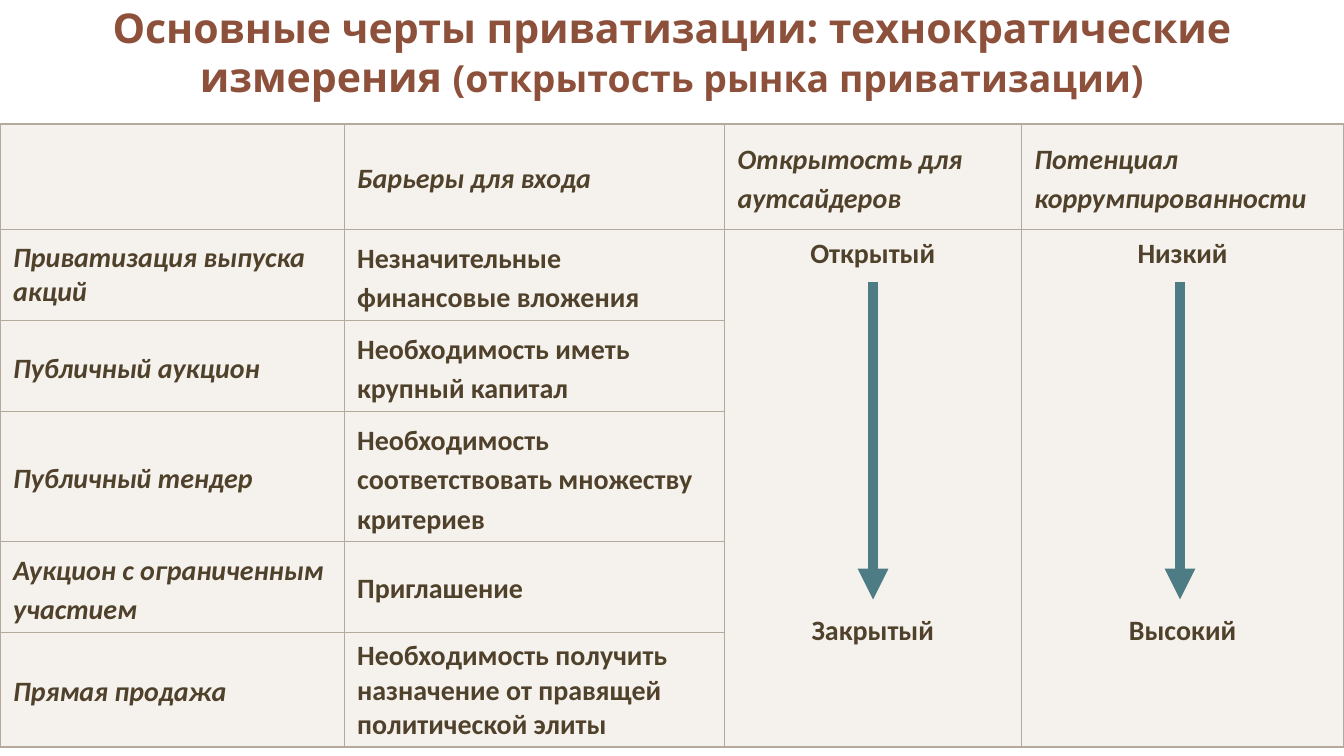
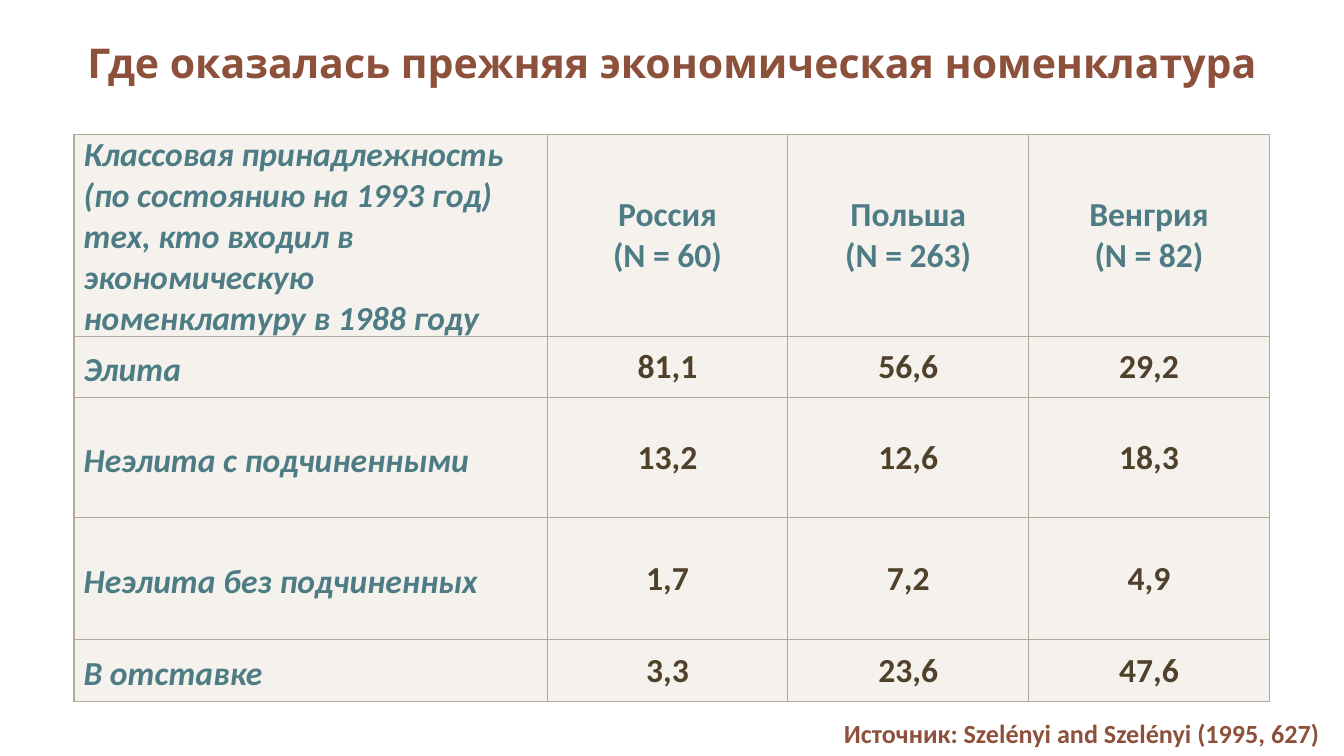
from dataclasses import dataclass, replace
from typing import NamedTuple, Optional

from lxml.etree import SubElement
from pptx import Presentation
from pptx.dml.color import RGBColor
from pptx.enum.shapes import MSO_CONNECTOR
from pptx.enum.text import MSO_ANCHOR, MSO_AUTO_SIZE, PP_ALIGN
from pptx.oxml import parse_xml
from pptx.oxml.ns import nsdecls, qn
from pptx.slide import Slide
from pptx.table import Table, _Cell as Cell
from pptx.text.text import TextFrame, _Paragraph as Paragraph
from pptx.util import Cm, Pt

BROWN = "8D503B"
DARK = "50412B"
TEAL = "4D7C85"
BEIGE = "EFEAE4"
BORDER = "B3A99D"
WHITE = "FFFFFF"
BODY_FONT = "Calibri"
TITLE_FONT = "Open Sans"


class Box(NamedTuple):
    left: float
    top: float
    width: float
    height: float


class TitlePart(NamedTuple):
    text: str
    size: float


class Arrow(NamedTuple):
    x: float
    top: float
    bottom: float


@dataclass(frozen=True)
class CellStyle:
    size: float
    color: str
    italic: bool = False
    align: PP_ALIGN = PP_ALIGN.LEFT
    anchor: MSO_ANCHOR = MSO_ANCHOR.MIDDLE
    line_spacing: Optional[float] = None
    space_after: float = 0


class Entry(NamedTuple):
    text: str
    style: CellStyle


@dataclass(frozen=True)
class Grid:
    left: float
    top: float
    columns: list[float]
    heights: list[float]
    margins: tuple[float, float]


class Scale(NamedTuple):
    column: int
    start: str
    end: str


def rgb(value: str) -> RGBColor:
    return RGBColor.from_string(value)


def format_runs(paragraph: Paragraph, font: str, size: float, color: str,
                italic: bool = False) -> None:
    for run in paragraph.runs:
        run.font.name = font
        run.font.size = Pt(size)
        run.font.bold = True
        run.font.italic = italic
        run.font.color.rgb = rgb(color)


def add_text_frame(slide: Slide, box: Box) -> TextFrame:
    frame = slide.shapes.add_textbox(*map(Cm, box)).text_frame
    frame.word_wrap = True
    return frame


def add_title(slide: Slide, height: float, parts: list[TitlePart],
              line_spacing: Optional[float] = None) -> None:
    frame = add_text_frame(slide, Box(0.3, 0, 24.8, height))
    frame.vertical_anchor = MSO_ANCHOR.MIDDLE
    heading = frame.paragraphs[0]
    heading.alignment = PP_ALIGN.CENTER
    heading.line_spacing = line_spacing
    heading.text = parts[0].text
    for part in parts[1:]:
        heading.add_run().text = part.text
    format_runs(heading, TITLE_FONT, parts[0].size, BROWN)
    for run, part in zip(heading.runs, parts):
        run.font.size = Pt(part.size)


def add_source(slide: Slide, citation: str) -> None:
    frame = add_text_frame(slide, Box(15.7, 13.44, 9.7, 0.86))
    frame.auto_size = MSO_AUTO_SIZE.SHAPE_TO_FIT_TEXT
    frame.text = citation
    format_runs(frame.paragraphs[0], BODY_FONT, 14, BROWN)


def add_arrow(slide: Slide, arrow: Arrow) -> None:
    connector = slide.shapes.add_connector(
        MSO_CONNECTOR.STRAIGHT,
        Cm(arrow.x), Cm(arrow.top), Cm(arrow.x), Cm(arrow.bottom))
    connector.line.color.rgb = rgb(TEAL)
    connector.line.width = Pt(5.5)
    SubElement(connector.line._get_or_add_ln(), qn("a:tailEnd"), type="triangle")
    SubElement(connector._element.spPr, qn("a:effectLst"))


def paint_cell(cell: Cell, outer_sides: dict[str, bool]) -> None:
    cell.fill.solid()
    cell.fill.fore_color.rgb = rgb(BEIGE)
    properties = cell._tc.get_or_add_tcPr()
    SubElement(properties.find(".//" + qn("a:srgbClr")), qn("a:alpha"), val="60000")
    for position, (side, outer) in enumerate(outer_sides.items()):
        width = Pt(1 if outer else 0.5)
        properties.insert(position, parse_xml(
            f'<a:ln{side} {nsdecls("a")} w="{width}"><a:solidFill>'
            f'<a:srgbClr val="{BORDER}"/></a:solidFill></a:ln{side}>'))


def style_paragraph(paragraph: Paragraph, style: CellStyle) -> None:
    paragraph.alignment = style.align
    paragraph.line_spacing = style.line_spacing
    if style.space_after:
        paragraph.space_after = Pt(style.space_after)
    format_runs(paragraph, BODY_FONT, style.size, style.color, style.italic)


def fill_entry(cell: Cell, entry: Entry) -> None:
    cell.vertical_anchor = entry.style.anchor
    paragraph = cell.text_frame.paragraphs[0]
    paragraph.text = entry.text
    style_paragraph(paragraph, entry.style)


def fill_scale(table: Table, scale: Scale, style: CellStyle) -> None:
    cell = table.cell(1, scale.column)
    cell.text_frame.text = f"{scale.start}\n{scale.end}"
    cell.vertical_anchor = style.anchor
    for paragraph in cell.text_frame.paragraphs:
        style_paragraph(paragraph, style)
    cell.text_frame.paragraphs[1].space_before = Pt(184)


def add_grid(slide: Slide, grid: Grid, entries: list[list[Optional[Entry]]],
             merged_columns: tuple[int, ...] = ()) -> Table:
    row_count, column_count = len(grid.heights), len(grid.columns)
    table = slide.shapes.add_table(
        row_count, column_count, Cm(grid.left), Cm(grid.top),
        Cm(sum(grid.columns)), Cm(sum(grid.heights))).table
    table.first_row = False
    table.horz_banding = False
    for column, width in zip(table.columns, grid.columns):
        column.width = Cm(width)
    for row, height in zip(table.rows, grid.heights):
        row.height = Cm(height)
    for column in merged_columns:
        table.cell(1, column).merge(table.cell(row_count - 1, column))

    side_margin, end_margin = map(Cm, grid.margins)
    for r in range(row_count):
        for c in range(column_count):
            cell = table.cell(r, c)
            cell.margin_left = cell.margin_right = side_margin
            cell.margin_top = cell.margin_bottom = end_margin
            last_row = r + (cell.span_height if cell.is_merge_origin else 1)
            paint_cell(cell, {"L": c == 0, "R": c == column_count - 1,
                              "T": r == 0, "B": last_row == row_count})
    for r, row_entries in enumerate(entries):
        for c, entry in enumerate(row_entries):
            if entry:
                fill_entry(table.cell(r, c), entry)
    return table


def add_blank_slide(deck: Presentation) -> Slide:
    slide = deck.slides.add_slide(deck.slide_layouts[6])
    slide.background.fill.solid()
    slide.background.fill.fore_color.rgb = rgb(WHITE)
    return slide


def build_openness(deck: Presentation) -> None:
    slide = add_blank_slide(deck)
    add_title(slide, 1.96, [
        TitlePart("Основные черты приватизации: технократические измерения ", 22),
        TitlePart("(открытость рынка приватизации)", 20)])

    barrier = CellStyle(15, DARK, line_spacing=1.15, space_after=10)
    method = replace(barrier, italic=True)
    tight_barrier = CellStyle(15, DARK)
    tight_method = replace(tight_barrier, italic=True)
    scale_style = replace(tight_barrier, align=PP_ALIGN.CENTER, anchor=MSO_ANCHOR.TOP)

    entries = [
        [None, Entry("Барьеры для входа", method),
         Entry("Открытость для аутсайдеров", method),
         Entry("Потенциал коррумпированности", method)],
        [Entry("Приватизация выпуска акций", tight_method),
         Entry("Незначительные финансовые вложения", barrier)],
        [Entry("Публичный аукцион", method),
         Entry("Необходимость иметь крупный капитал", barrier)],
        [Entry("Публичный тендер", method),
         Entry("Необходимость соответствовать множеству критериев", barrier)],
        [Entry("Аукцион с ограниченным участием", method),
         Entry("Приглашение", barrier)],
        [Entry("Прямая продажа", method),
         Entry("Необходимость получить назначение от правящей политической элиты",
               tight_barrier)],
    ]
    scales = [Scale(2, "Открытый", "Закрытый"), Scale(3, "Низкий", "Высокий")]
    grid = Grid(0, 2.34, [6.5, 7.19, 5.61, 6.1],
                [2, 1.6, 1.55, 2.2, 1.62, 1.98], (0.25, 0.13))
    table = add_grid(slide, grid, entries, tuple(scale.column for scale in scales))
    for scale in scales:
        fill_scale(table, scale, scale_style)
    for x in (16.5, 22.3):
        add_arrow(slide, Arrow(x, 5.33, 11.33))


def build_nomenklatura(deck: Presentation) -> None:
    slide = add_blank_slide(deck)
    add_title(slide, 2.54, [
        TitlePart("Где оказалась прежняя экономическая номенклатура", 22)], 0.75)

    corner = CellStyle(18, TEAL, italic=True)
    country = CellStyle(18, TEAL, align=PP_ALIGN.CENTER)
    group = replace(corner, line_spacing=1.15, space_after=10)
    share = replace(country, color=DARK)

    countries = ["Россия\n(N = 60)", "Польша\n(N = 263)", "Венгрия\n(N = 82)"]
    shares = {
        "Элита": ["81,1", "56,6", "29,2"],
        "Неэлита с подчиненными": ["13,2", "12,6", "18,3"],
        "Неэлита без подчиненных": ["1,7", "7,2", "4,9"],
        "В отставке": ["3,3", "23,6", "47,6"],
    }
    header = [Entry("Классовая принадлежность (по состоянию на 1993 год) тех, кто "
                    "входил в экономическую номенклатуру в 1988 году", corner)]
    header += [Entry(name, country) for name in countries]
    body = [[Entry(name, group)] + [Entry(value, share) for value in values]
            for name, values in shares.items()]
    grid = Grid(1.4, 2.54, [8.94] + [4.55] * len(countries),
                [2.79, 1.17, 2.26, 2.31, 1.17], (0.18, 0))
    add_grid(slide, grid, [header] + body)
    add_source(slide, "Источник: Szelényi and Szelényi (1995, 627)")


def main() -> None:
    deck = Presentation()
    deck.slide_width = Cm(25.4)
    deck.slide_height = Cm(14.29)
    build_openness(deck)
    build_nomenklatura(deck)
    deck.save("out.pptx")


if __name__ == "__main__":
    main()
